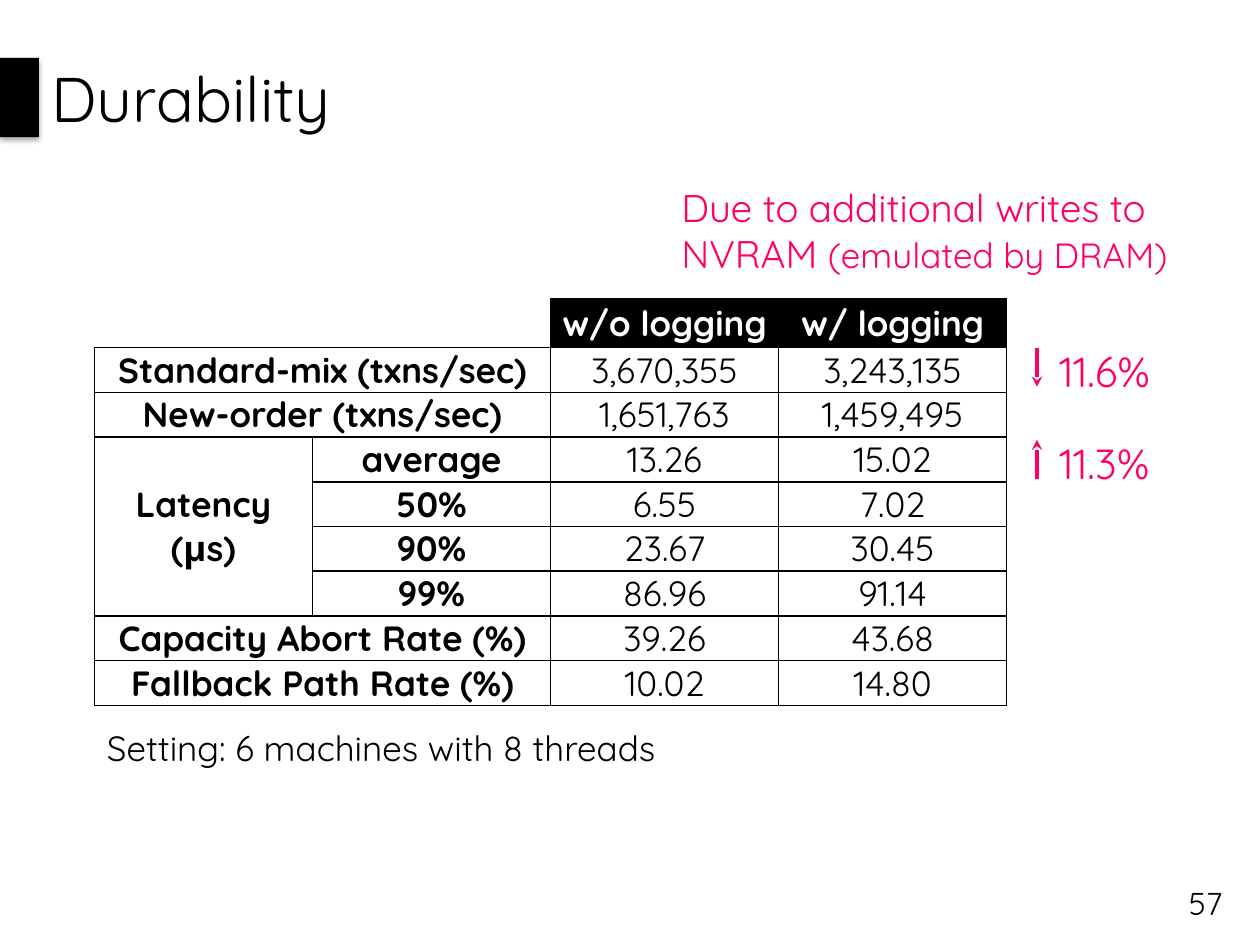
from lxml import etree
from pptx import Presentation
from pptx.dml.color import RGBColor
from pptx.enum.shapes import MSO_CONNECTOR, MSO_SHAPE
from pptx.enum.text import MSO_ANCHOR, PP_ALIGN
from pptx.oxml import parse_xml
from pptx.oxml.ns import nsdecls, qn
from pptx.util import Inches, Pt

STRAIGHT = MSO_CONNECTOR.STRAIGHT
RECTANGLE = MSO_SHAPE.RECTANGLE
MIDDLE, TOP = MSO_ANCHOR.MIDDLE, MSO_ANCHOR.TOP
LEFT, CENTER, RIGHT = PP_ALIGN.LEFT, PP_ALIGN.CENTER, PP_ALIGN.RIGHT
BLACK = RGBColor(0, 0, 0)
WHITE = RGBColor(255, 255, 255)
PINK = RGBColor(255, 0, 102)
FONT = "Quicksand"

COLUMN_WIDTHS = [1.73, 1.89, 1.81, 1.81]
HEADER_HEIGHT, ROW_HEIGHT = 0.39, 0.355
ROWS = [
    ["", "", "w/o logging", "w/ logging"],
    ["Standard-mix (txns/sec)", "", "3,670,355", "3,243,135"],
    ["New-order (txns/sec)", "", "1,651,763", "1,459,495"],
    ["Latency (μs)", "average", "13.26", "15.02"],
    ["", "50%", "6.55", "7.02"],
    ["", "90%", "23.67", "30.45"],
    ["", "99%", "86.96", "91.14"],
    ["Capacity Abort Rate (%)", "", "39.26", "43.68"],
    ["Fallback Path Rate (%)", "", "10.02", "14.80"],
]
WIDE_LABEL_ROWS = [0, 1, 2, 7, 8]
LATENCY_ROWS = (3, 6)


def inches(*lengths):
    return [Inches(length) for length in lengths]


def style_span(span, size, color, bold=False):
    span.font.name = FONT
    span.font.size = Pt(size)
    span.font.bold = bold
    span.font.color.rgb = color


def add_text(page, box, spans, color, align=LEFT, anchor=TOP, spacing=1.0):
    frame = page.shapes.add_textbox(*inches(*box)).text_frame
    frame.word_wrap = True
    frame.vertical_anchor = anchor
    para = frame.paragraphs[0]
    para.alignment = align
    para.line_spacing = spacing
    for text, size in spans:
        span = para.add_run()
        span.text = text
        style_span(span, size, color)


def add_title(page, box, text):
    marker = page.shapes.add_shape(RECTANGLE, *inches(0, 0.46, 0.31, 0.63))
    marker.fill.solid()
    marker.fill.fore_color.rgb = BLACK
    marker.line.fill.background()
    marker._element.spPr.append(parse_xml(
        f'<a:effectLst {nsdecls("a")}><a:outerShdw blurRad="40000" dist="23000" dir="5400000" '
        'rotWithShape="0"><a:srgbClr val="000000"><a:alpha val="35000"/></a:srgbClr>'
        '</a:outerShdw></a:effectLst>'))
    title = page.shapes.title
    title.left, title.top, title.width, title.height = inches(*box)
    frame = title.text_frame
    frame.text = text
    frame.vertical_anchor = MIDDLE
    para = frame.paragraphs[0]
    para.alignment = LEFT
    style_span(para.runs[0], 36, BLACK)


def set_borders(cell, hidden):
    properties = cell._tc.get_or_add_tcPr()
    for side in "LRTB":
        line = etree.SubElement(properties, qn(f"a:ln{side}"), w=str(Pt(1)))
        if side in hidden:
            etree.SubElement(line, qn("a:noFill"))
        else:
            fill = etree.SubElement(line, qn("a:solidFill"))
            etree.SubElement(fill, qn("a:srgbClr"), val=str(BLACK))


def fill_cell(cell, text, row, column):
    in_corner = row == 0 and column < 2
    is_header = row == 0 and not in_corner
    set_borders(cell, ("LT" if column == 0 else "LRT") if in_corner else "")
    cell.margin_left = cell.margin_right = Inches(0.08)
    cell.margin_top = cell.margin_bottom = 0
    cell.vertical_anchor = MIDDLE
    if in_corner:
        cell.fill.background()
    else:
        cell.fill.solid()
        cell.fill.fore_color.rgb = BLACK if is_header else WHITE
    if text:
        cell.text = text
        para = cell.text_frame.paragraphs[0]
        para.alignment = CENTER
        style_span(para.runs[0], 20, WHITE if is_header else BLACK, is_header or column < 2)


def add_results(page, left, top):
    width = sum(COLUMN_WIDTHS)
    height = HEADER_HEIGHT + ROW_HEIGHT * (len(ROWS) - 1)
    table = page.shapes.add_table(len(ROWS), len(COLUMN_WIDTHS),
                                  *inches(left, top, width, height)).table
    table.first_row = table.horz_banding = False
    for column, column_width in zip(table.columns, COLUMN_WIDTHS):
        column.width = Inches(column_width)
    for index, row in enumerate(table.rows):
        row.height = Inches(ROW_HEIGHT if index else HEADER_HEIGHT)
    for row, texts in enumerate(ROWS):
        for column, text in enumerate(texts):
            fill_cell(table.cell(row, column), text, row, column)
    for row in WIDE_LABEL_ROWS:
        table.cell(row, 0).merge(table.cell(row, 1))
    first, last = LATENCY_ROWS
    table.cell(first, 0).merge(table.cell(last, 0))


def add_change(page, left, top, text, rising):
    start, tip = top + 0.06, top + 0.37
    if rising:
        start, tip = tip, start
    arrow = page.shapes.add_connector(STRAIGHT, *inches(left, start, left, tip))
    arrow.line.color.rgb = PINK
    arrow.line.width = Pt(2)
    etree.SubElement(arrow.line._get_or_add_ln(), qn("a:tailEnd"), type="stealth")
    etree.SubElement(arrow._element.spPr, qn("a:effectLst"))
    add_text(page, (left + 0.08, top, 1.34, 0.44), [(text, 24)], PINK,
             anchor=MIDDLE, spacing=1.1)


def main():
    deck = Presentation()
    deck.slide_width, deck.slide_height = inches(10, 7.5)
    page = deck.slides.add_slide(deck.slide_layouts[5])
    add_title(page, (0.31, 0, 9.69, 1.55), "Durability")
    add_results(page, 0.75, 2.37)
    add_change(page, 8.23, 2.7, "11.6%", rising=False)
    add_change(page, 8.23, 3.43, "11.3%", rising=True)
    add_text(page, (0.75, 5.72, 4.96, 0.44), [("Setting: 6 machines with 8 threads", 20)], BLACK)
    add_text(page, (5.31, 1.41, 4.41, 0.84),
             [("Due to additional writes to NVRAM ", 22), ("(emulated by DRAM)", 20)], PINK)
    add_text(page, (9.25, 6.97, 0.55, 0.4), [("57", 18)], BLACK, RIGHT, MIDDLE)
    deck.save("out.pptx")


if __name__ == "__main__":
    main()
